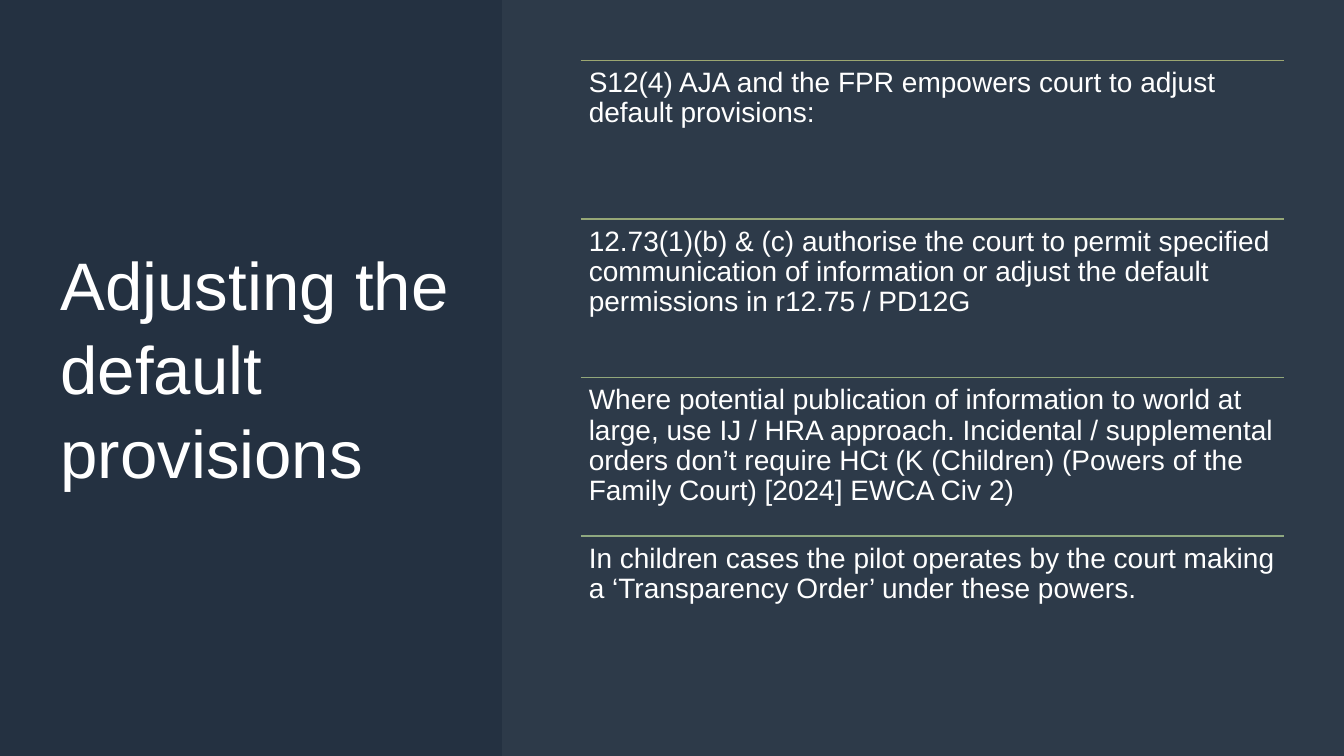
"""Build the slide on adjusting the default provisions."""
from lxml import etree
from pptx import Presentation
from pptx.dml.color import RGBColor
from pptx.enum.shapes import MSO_CONNECTOR, MSO_SHAPE
from pptx.enum.text import MSO_ANCHOR
from pptx.oxml.ns import qn
from pptx.util import Inches, Pt

STRAIGHT = MSO_CONNECTOR.STRAIGHT
RECTANGLE = MSO_SHAPE.RECTANGLE
TOP, MIDDLE = MSO_ANCHOR.TOP, MSO_ANCHOR.MIDDLE
NAVY = RGBColor(0x24, 0x31, 0x41)
PALE = RGBColor(0xE5, 0xEA, 0xF0)
WHITE = RGBColor(0xFF, 0xFF, 0xFF)
WIDTH, HEIGHT = 13.33, 7.5
MARGIN = 0.6
PANEL_LEFT = 4.98
LIST_LEFT, LIST_WIDTH, ROW_HEIGHT = 5.76, 6.97, 1.573

ITEMS = [
    ("S12(4) AJA and the FPR empowers court to adjust default provisions:",
     RGBColor(0x9C, 0xA6, 0x71)),
    ("12.73(1)(b) & (c) authorise the court to permit specified communication "
     "of information or adjust the default permissions in r12.75 / PD12G",
     RGBColor(0x96, 0xA7, 0x76)),
    ("Where potential publication of information to world at large, use IJ / HRA "
     "approach. Incidental / supplemental orders don’t require HCt (K (Children) "
     "(Powers of the Family Court) [2024] EWCA Civ 2)",
     RGBColor(0x92, 0xA7, 0x7B)),
    ("In children cases the pilot operates by the court making a "
     "‘Transparency Order’ under these powers.",
     RGBColor(0x8F, 0xA8, 0x80)),
]


def add_text(s, text, left, top, width, height, size, inset, anchor, spacing):
    """Add a wrapped white text box."""
    box = s.shapes.add_textbox(Inches(left), Inches(top), Inches(width), Inches(height))
    tf = box.text_frame
    tf.word_wrap = True
    tf.vertical_anchor = anchor
    tf.margin_left = tf.margin_right = tf.margin_top = tf.margin_bottom = Inches(inset)
    p = tf.paragraphs[0]
    p.text = text
    p.line_spacing = spacing
    p.font.name = "Arial"
    p.font.size = Pt(size)
    p.font.color.rgb = WHITE


prs = Presentation()
prs.slide_width, prs.slide_height = Inches(WIDTH), Inches(HEIGHT)
s = prs.slides.add_slide(prs.slide_layouts[6])
s.background.fill.solid()
s.background.fill.fore_color.rgb = NAVY

panel = s.shapes.add_shape(RECTANGLE, Inches(PANEL_LEFT), 0,
                           Inches(WIDTH - PANEL_LEFT), Inches(HEIGHT))
panel.shadow.inherit = False
panel.fill.solid()
panel.fill.fore_color.rgb = PALE
panel.line.fill.background()
color = panel.fill._xPr.find(qn("a:solidFill"))[0]
etree.SubElement(color, qn("a:alpha"), val="5000")

add_text(s, "Adjusting the default provisions", MARGIN, MARGIN, 3.9, 6.06,
         48, 0, MIDDLE, 1.04)

for row, (text, rule_color) in enumerate(ITEMS):
    top = MARGIN + row * ROW_HEIGHT
    rule = s.shapes.add_connector(STRAIGHT, Inches(LIST_LEFT), Inches(top),
                                  Inches(LIST_LEFT + LIST_WIDTH), Inches(top))
    rule.line.color.rgb = rule_color
    rule.line.width = Pt(1)
    etree.SubElement(rule._element.spPr, qn("a:effectLst"))
    add_text(s, text, LIST_LEFT, top, LIST_WIDTH, ROW_HEIGHT, 20, 0.08, TOP, 0.9)

prs.save("out.pptx")
